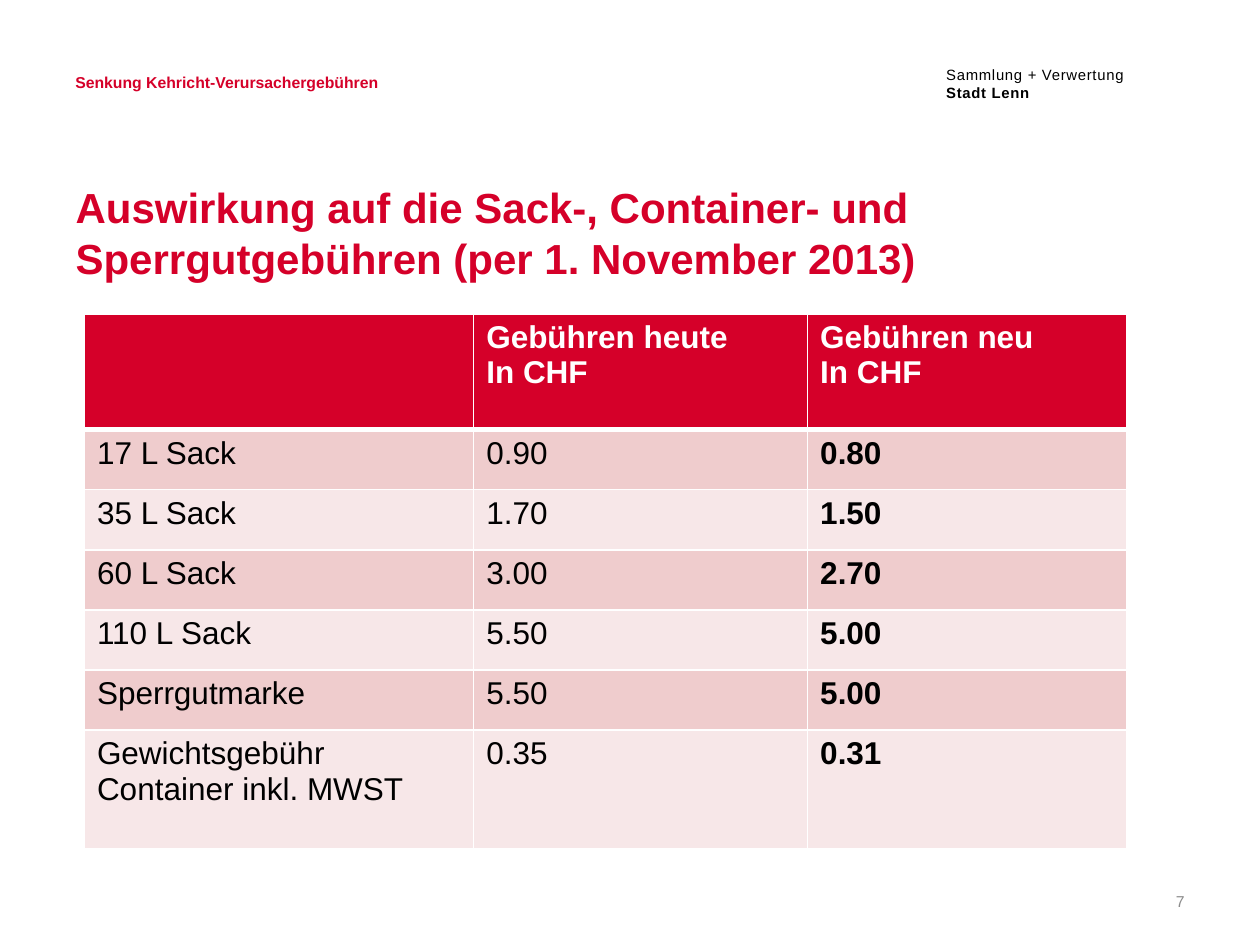
from lxml.etree import SubElement as Sub
from pptx import Presentation
from pptx.dml.color import RGBColor
from pptx.enum.text import MSO_ANCHOR as Anchor, MSO_AUTO_SIZE as Auto, PP_ALIGN as Align
from pptx.oxml.ns import qn
from pptx.util import Inches, Pt

RED = RGBColor(0xD5, 0x00, 0x29)
ROSE = RGBColor(0xEF, 0xCC, 0xCD)
PALE = RGBColor(0xF7, 0xE7, 0xE8)
GREY = RGBColor(0x8C, 0x8C, 0x8C)
BLACK = RGBColor(0, 0, 0)
WHITE = RGBColor(0xFF, 0xFF, 0xFF)

deck = Presentation()
deck.slide_width, deck.slide_height = Inches(10), Inches(7.5)
unit = deck.slide_width / 100
slide = deck.slides.add_slide(deck.slide_layouts[5])


def span(*cells):
    return [round(cell * unit) for cell in cells]


def style(frame, text, size, color, bold=False, align=Align.LEFT):
    frame.text = text
    frame.word_wrap = True
    look = {"name": "Arial", "size": Pt(size), "bold": bold}
    for para in frame.paragraphs:
        para.alignment = align
        for run in para.runs:
            for key, value in look.items():
                setattr(run.font, key, value)
            run.font.color.rgb = color


office = slide.shapes.add_textbox(*span(75.1, 5.2, 23.7, 6.4)).text_frame
style(office, "Sammlung + Verwertung\nStadt Lenn", 8.5, BLACK)
for side in ("left", "top", "right", "bottom"):
    setattr(office, f"margin_{side}", 0)
for para in office.paragraphs:
    para.runs[0]._r.get_or_add_rPr().set("spc", "40")
office.paragraphs[1].runs[0].font.bold = True

title = slide.shapes.title
place = span(5, 13.9, 89.9, 7.9)
for key, value in zip(("left", "top", "width", "height"), place):
    setattr(title, key, value)
head = title.text_frame
style(head, "Auswirkung auf die Sack-, Container- und "
      "Sperrgutgebühren (per 1. November 2013)", 24, RED, True)
head.auto_size = Auto.NONE
head.vertical_anchor = Anchor.TOP
head.paragraphs[0].line_spacing = Pt(29)

fees = [
    ("", "Gebühren heute\nIn CHF", "Gebühren neu\nIn CHF"),
    ("17 L Sack", "0.90", "0.80"),
    ("35 L Sack", "1.70", "1.50"),
    ("60 L Sack", "3.00", "2.70"),
    ("110 L Sack", "5.50", "5.00"),
    ("Sperrgutmarke", "5.50", "5.00"),
    ("Gewichtsgebühr Container inkl. MWST", "0.35", "0.31"),
]
wide = span(30.9, 26.5, 25.3)
tall = span(9.2, *[4.77] * 5, 9.4)
left, top = span(6.7, 24.9)
table = slide.shapes.add_table(len(tall), len(wide), left, top, sum(wide), sum(tall)).table
for col, width in zip(table.columns, wide):
    col.width = width
for row, height in zip(table.rows, tall):
    row.height = height

for i, texts in enumerate(fees):
    for j, text in enumerate(texts):
        cell = table.cell(i, j)
        first = i == 0
        style(cell.text_frame, text, 18, WHITE if first else BLACK, first or j == 2)
        if not text:
            cell.text_frame.paragraphs[0].font.size = Pt(18)
        props = cell._tc.get_or_add_tcPr()
        for side in "LRTB":
            thick = (i, side) in ((0, "B"), (1, "T"))
            line = Sub(props, qn(f"a:ln{side}"), w=str(Pt(3 if thick else 1)))
            Sub(Sub(line, qn("a:solidFill")), qn("a:srgbClr"), val=str(WHITE))
        cell.fill.solid()
        cell.fill.fore_color.rgb = RED if first else (PALE, ROSE)[i % 2]

topic = slide.shapes.add_textbox(*span(5, 5.3, 62.3, 4)).text_frame
style(topic, "Senkung Kehricht-Verursachergebühren", 9, RED, True)

page = slide.shapes.add_textbox(*span(87.8, 69.5, 7.2, 4)).text_frame
style(page, "7", 9, GREY, align=Align.RIGHT)
page.vertical_anchor = Anchor.MIDDLE

deck.save("out.pptx")
